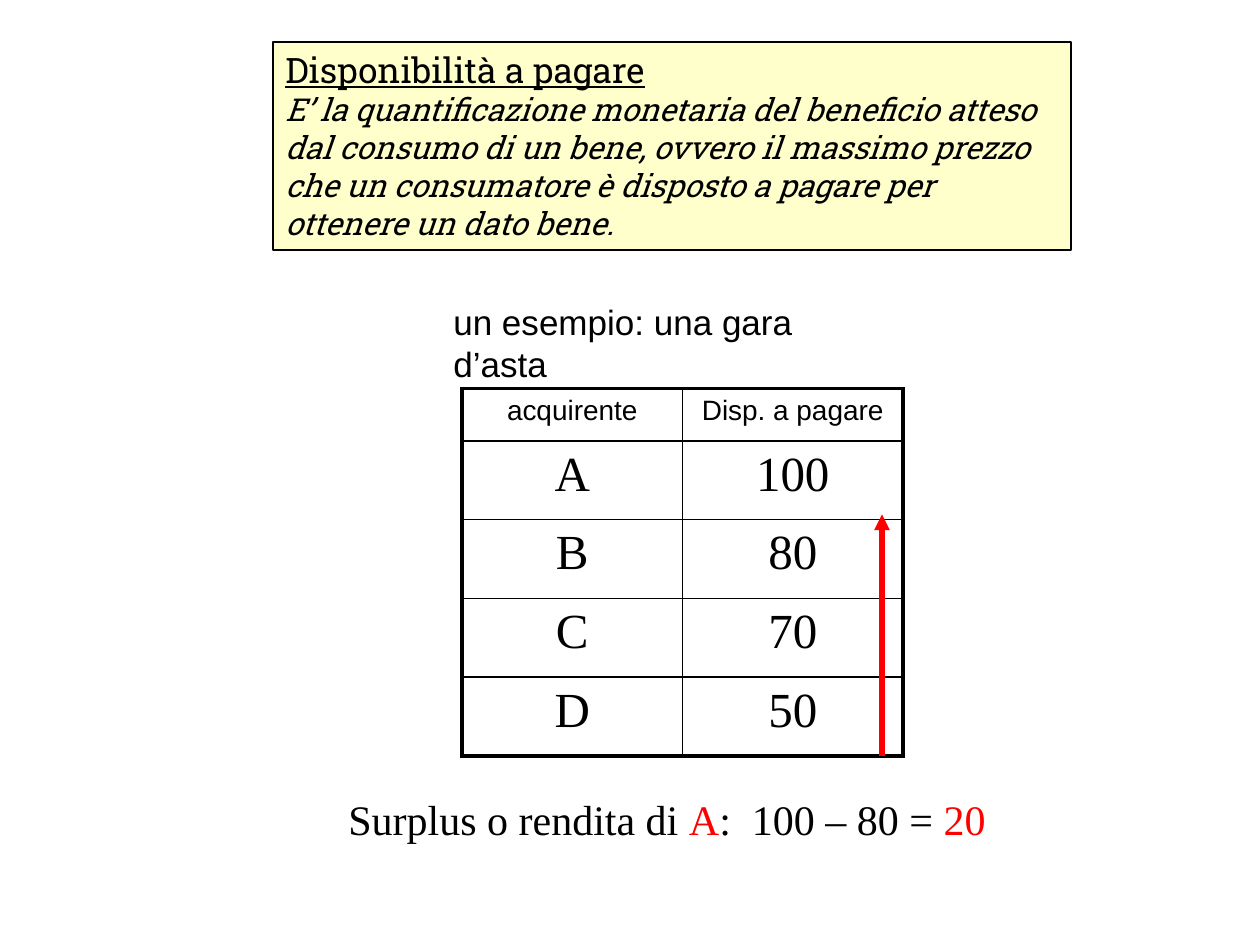
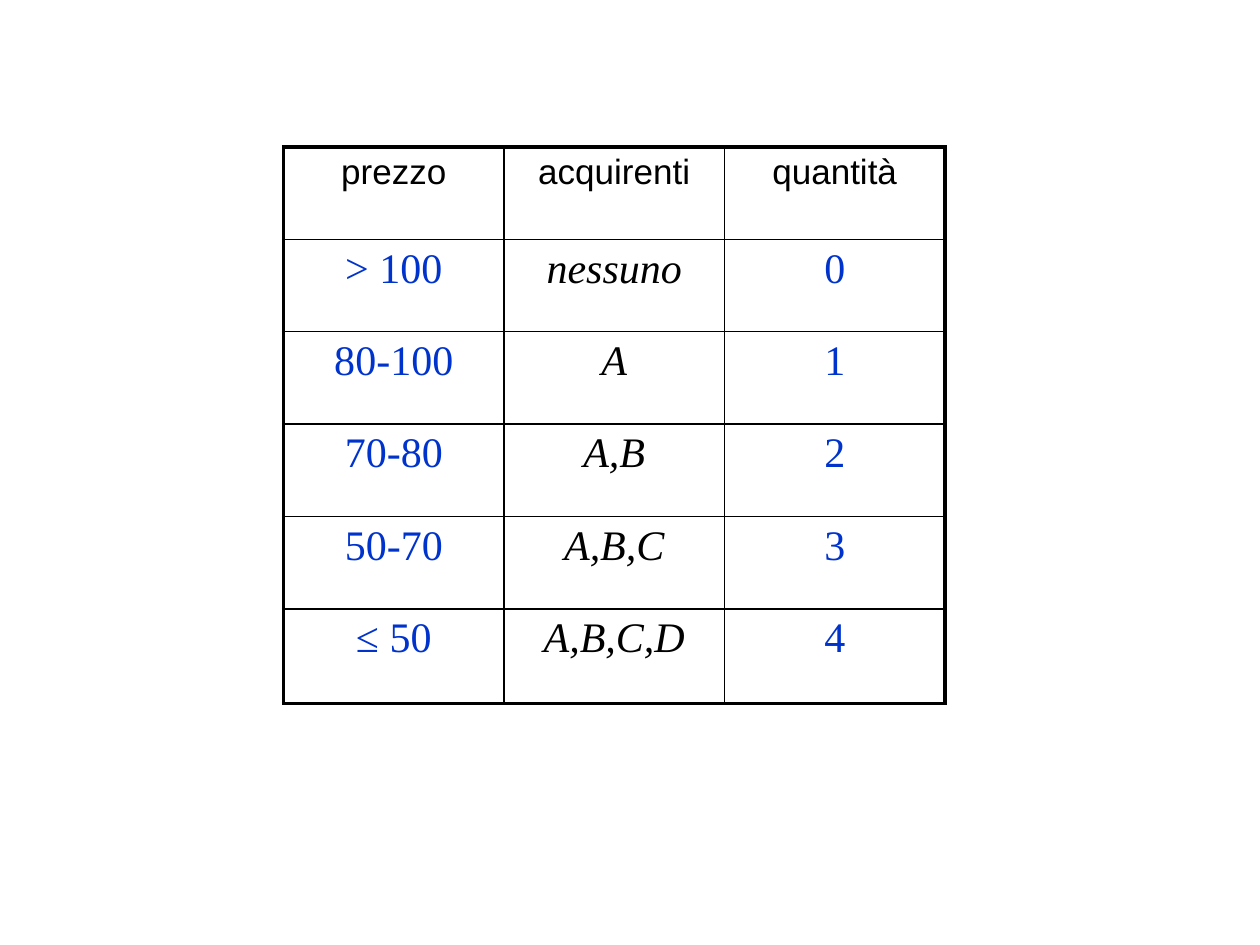
from dataclasses import dataclass

from lxml import etree
from pptx import Presentation
from pptx import util as u
from pptx.dml.color import RGBColor
from pptx.enum import shapes, text
from pptx.oxml import ns

PX = 7620  # 120 px to the inch


@dataclass(frozen=True)
class Theme:
    black: str = "000000"
    red: str = "FF0000"
    blue: str = "0033CC"
    cream: str = "FFFFCC"
    sans: str = "Arial"
    serif: str = "Times New Roman"
    slab: str = "Roboto Slab"
    small: int = 16
    note: int = 18
    heading: int = 20
    large: int = 24
    huge: int = 28
    thin: float = 1
    thick: float = 2.25


theme = Theme()


def style_runs(paragraph, name, size, color=theme.black, italic=False):
    for run in paragraph.runs:
        run.font.name = name
        run.font.size = u.Pt(size)
        run.font.color.rgb = RGBColor.from_string(color)
        run.font.italic = italic


def add_grid(slide, left, top, rows, heights, header_size, body_size, columns):
    """Add a table with a thick frame; columns holds each body column's (colour, italic)."""
    width = 210
    frame = slide.shapes.add_table(len(rows), len(columns), left * PX, top * PX,
                                   width * len(columns) * PX, sum(heights) * PX)
    table = frame.table
    table.first_row = table.horz_banding = False
    for column in table.columns:
        column.width = width * PX
    for row, height in zip(table.rows, heights):
        row.height = height * PX

    last_row, last_column = len(rows) - 1, len(columns) - 1
    for i, values in enumerate(rows):
        for j, value in enumerate(values):
            cell = table.cell(i, j)
            cell.text_frame.text = value
            paragraph = cell.text_frame.paragraphs[0]
            paragraph.alignment = text.PP_ALIGN.CENTER
            size = body_size if i else header_size
            paragraph.space_before = u.Pt(size * 0.2)
            if i:
                style_runs(paragraph, theme.serif, size, *columns[j])
            else:
                style_runs(paragraph, theme.sans, size)

            properties = cell._tc.get_or_add_tcPr()
            on_frame = {"L": j == 0, "R": j == last_column, "T": i == 0, "B": i == last_row}
            for side, outer in on_frame.items():
                weight = theme.thick if outer else theme.thin
                border = etree.SubElement(properties, ns.qn(f"a:ln{side}"), w=str(u.Pt(weight)))
                fill = etree.SubElement(border, ns.qn("a:solidFill"))
                etree.SubElement(fill, ns.qn("a:srgbClr"), val=theme.black)
            cell.fill.background()


presentation = Presentation()
presentation.slide_width = 1200 * PX
presentation.slide_height = 900 * PX
blank = presentation.slide_layouts[6]

# Slide 1: willingness to pay, with an auction as example
slide = presentation.slides.add_slide(blank)

definition = slide.shapes.add_shape(shapes.MSO_SHAPE.RECTANGLE, 260 * PX, 40 * PX, 760 * PX, 198 * PX)
definition.shadow.inherit = False
definition.fill.solid()
definition.fill.fore_color.rgb = RGBColor.from_string(theme.cream)
definition.line.color.rgb = RGBColor.from_string(theme.black)
definition.line.width = u.Pt(0.75)
text_frame = definition.text_frame
text_frame.text = (
    "Disponibilità a pagare\n"
    "E’ la quantificazione monetaria del beneficio atteso dal consumo di un bene, "
    "ovvero il massimo prezzo che un consumatore è disposto a pagare per ottenere un dato bene."
)
text_frame.word_wrap = True
text_frame.auto_size = text.MSO_AUTO_SIZE.SHAPE_TO_FIT_TEXT
text_frame.vertical_anchor = text.MSO_ANCHOR.TOP
term, meaning = text_frame.paragraphs
term.alignment = meaning.alignment = text.PP_ALIGN.LEFT
style_runs(term, theme.slab, theme.heading)
term.runs[0].font.underline = True
style_runs(meaning, theme.slab, theme.note, italic=True)

bids = [("acquirente", "Disp. a pagare"), ("A", "100"), ("B", "80"), ("C", "70"), ("D", "50")]
add_grid(slide, 440, 370, bids, [50] + [75] * 4, theme.small, theme.huge,
         [(theme.black, False)] * 2)

example = slide.shapes.add_textbox(420 * PX, 280 * PX, 444 * PX, 52 * PX)
example.text_frame.word_wrap = True
example.text_frame.text = "un esempio: una gara d’asta"
style_runs(example.text_frame.paragraphs[0], theme.sans, theme.heading)

arrow = slide.shapes.add_connector(shapes.MSO_CONNECTOR.STRAIGHT, 840 * PX, 720 * PX, 840 * PX, 490 * PX)
arrow.line.color.rgb = RGBColor.from_string(theme.red)
arrow.line.width = u.Pt(3)
etree.SubElement(arrow.line._get_or_add_ln(), ns.qn("a:tailEnd"), type="triangle")
etree.SubElement(arrow._element.spPr, ns.qn("a:effectLst"))

surplus = slide.shapes.add_textbox(320 * PX, 750 * PX, 631 * PX, 60 * PX)
surplus.text_frame.word_wrap = False
paragraph = surplus.text_frame.paragraphs[0]
for part in ("Surplus o rendita di ", "A", ":  100 – 80 = ", "20"):
    paragraph.add_run().text = part
style_runs(paragraph, theme.serif, theme.large)
for run in paragraph.runs[1::2]:
    run.font.color.rgb = RGBColor.from_string(theme.red)

# Slide 2: quantity demanded at each price
slide = presentation.slides.add_slide(blank)
demand = [
    ("prezzo", "acquirenti", "quantità"),
    ("> 100", "nessuno", "0"),
    ("80-100", "A", "1"),
    ("70-80", "A,B", "2"),
    ("50-70", "A,B,C", "3"),
    ("≤ 50", "A,B,C,D", "4"),
]
add_grid(slide, 270, 140, demand, [88] * 5 + [90], theme.heading, theme.large,
         [(theme.blue, False), (theme.black, True), (theme.blue, False)])

presentation.save("out.pptx")
